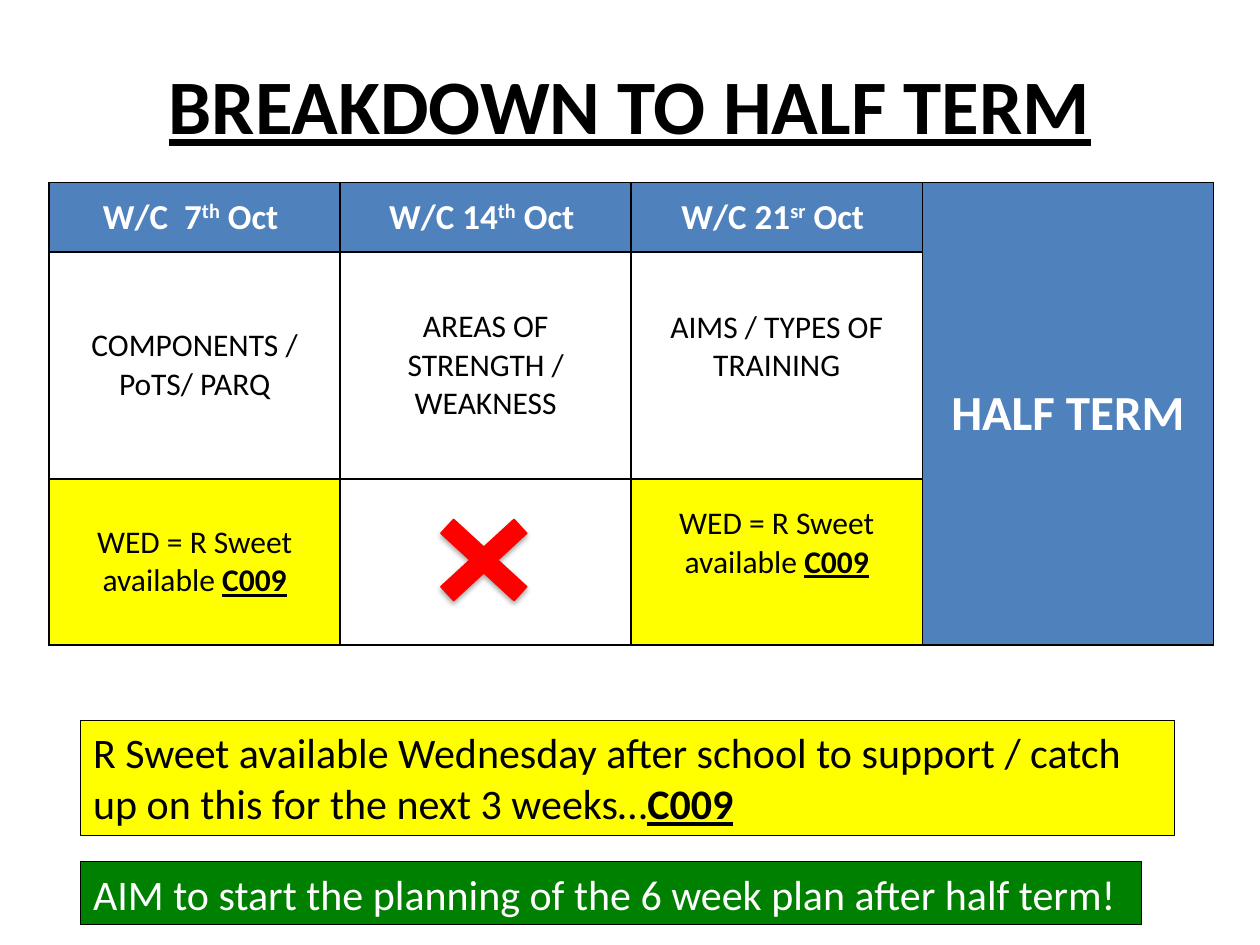
from dataclasses import dataclass, field

from lxml.etree import SubElement
from pptx import Presentation
from pptx.dml.color import RGBColor
from pptx.enum.shapes import MSO_SHAPE as Shape
from pptx.enum.text import MSO_ANCHOR as Anchor, MSO_AUTO_SIZE as AutoSize, PP_ALIGN as Align
from pptx.oxml.ns import qn
from pptx.util import Inches, Pt

BLACK = RGBColor(0x00, 0x00, 0x00)
WHITE = RGBColor(0xFF, 0xFF, 0xFF)
BLUE = RGBColor(0x4F, 0x81, 0xBD)
YELLOW = RGBColor(0xFF, 0xFF, 0x00)
GREEN = RGBColor(0x00, 0x80, 0x00)
RED = RGBColor(0xFF, 0x00, 0x00)

STRONG = {"bold": True, "underline": True}
HEADING = {"size": Pt(20), "bold": True}
BODY = {"size": Pt(18), "bold": False}
NOTE = {"size": Pt(24)}


@dataclass
class Phrase:
    """A stretch of text with its own format."""
    text: str
    fmt: dict = field(default_factory=dict)
    superscript: bool = False


@dataclass
class Entry:
    """A filled table cell."""
    phrases: list[Phrase]
    fill: RGBColor
    color: RGBColor = BLACK
    fmt: dict = field(default_factory=lambda: BODY)
    bottom: float = 0.05


@dataclass
class Note:
    """A framed message below the table."""
    phrases: list[Phrase]
    box: tuple[float, float, float, float]
    fill: RGBColor
    color: RGBColor
    wrap: bool


def write(paragraph, phrases: list[Phrase], fmt: dict, color: RGBColor) -> None:
    for phrase in phrases:
        run = paragraph.add_run()
        run.text = phrase.text
        for name, value in {"name": "Calibri", **fmt, **phrase.fmt}.items():
            setattr(run.font, name, value)
        run.font.color.rgb = color
        if phrase.superscript:
            run._r.get_or_add_rPr().set("baseline", "30000")


def add_borders(cell) -> None:
    properties = cell._tc.get_or_add_tcPr()
    for position, side in enumerate(("lnL", "lnR", "lnT", "lnB")):
        line = properties.makeelement(qn(f"a:{side}"), {"w": str(Pt(1))})
        solid = SubElement(line, qn("a:solidFill"))
        SubElement(solid, qn("a:srgbClr"), val=str(BLACK))
        properties.insert(position, line)


def fill_cell(cell, entry: Entry) -> None:
    cell.fill.solid()
    cell.fill.fore_color.rgb = entry.fill
    cell.vertical_anchor = Anchor.MIDDLE
    cell.margin_bottom = Inches(entry.bottom)
    paragraph = cell.text_frame.paragraphs[0]
    paragraph.alignment = Align.CENTER
    write(paragraph, entry.phrases, entry.fmt, entry.color)


def add_note(slide, note: Note) -> None:
    box = slide.shapes.add_textbox(*map(Inches, note.box))
    box.fill.solid()
    box.fill.fore_color.rgb = note.fill
    box.line.color.rgb = BLACK
    box.line.width = Pt(0.75)
    box.text_frame.word_wrap = note.wrap
    box.text_frame.auto_size = AutoSize.SHAPE_TO_FIT_TEXT
    write(box.text_frame.paragraphs[0], note.phrases, NOTE, note.color)


def add_cross(slide) -> None:
    cross = slide.shapes.add_shape(
        Shape.MATH_MULTIPLY, Inches(3.28), Inches(3.93), Inches(1.12), Inches(1.03))
    cross.adjustments[0] = 0.147
    cross.fill.solid()
    cross.fill.fore_color.rgb = RED
    cross.line.color.rgb = RED
    cross.line.width = Pt(0.75)
    # Soft shadow straight below
    cross.shadow.inherit = False
    effects = cross._element.spPr.find(qn("a:effectLst"))
    shadow = SubElement(effects, qn("a:outerShdw"), blurRad=str(Pt(3.1)),
                        dist=str(Pt(1.8)), dir="5400000", rotWithShape="0")
    tint = SubElement(shadow, qn("a:srgbClr"), val=str(BLACK))
    SubElement(tint, qn("a:alpha"), val="35000")


def week(day: str, suffix: str) -> Entry:
    date = [Phrase(f"W/C {day}"), Phrase(suffix, superscript=True), Phrase(" Oct ")]
    return Entry(date, BLUE, WHITE, HEADING)


def topic(text: str, bottom: float = 0.05) -> Entry:
    return Entry([Phrase(text)], WHITE, bottom=bottom)


def support(bottom: float = 0.05) -> Entry:
    return Entry([Phrase("WED = R Sweet available "), Phrase("C009", STRONG)], YELLOW,
                 bottom=bottom)


RAISED = 0.35  # bottom margin that lifts the last week's text
COLUMN_WIDTH = 2.31
ROW_HEIGHTS = (0.55, 1.8, 1.32)
HALF_TERM = Entry([Phrase("HALF TERM")], BLUE, WHITE, {"size": Pt(28), "bold": True})
SCHEDULE = [
    [week(" 7", "th"), week("14", "th"), week("21", "sr"), HALF_TERM],
    [topic("COMPONENTS / PoTS/ PARQ"), topic("AREAS OF STRENGTH / WEAKNESS"),
     topic("AIMS / TYPES OF TRAINING", RAISED)],
    [support(), Entry([], WHITE), support(RAISED)],
]
NOTES = [
    Note([Phrase("R Sweet available Wednesday after school to support / catch up on this "
                 "for the next 3 weeks…"), Phrase("C009", STRONG)],
         (0.64, 5.72, 8.68, 0.91), YELLOW, BLACK, True),
    Note([Phrase("AIM to start the planning of the 6 week plan after half term!")],
         (0.64, 6.84, 8.42, 0.5), GREEN, WHITE, False),
]


def add_schedule(slide) -> None:
    rows, columns = len(ROW_HEIGHTS), len(SCHEDULE[0])
    table = slide.shapes.add_table(
        rows, columns, Inches(0.39), Inches(1.45),
        Inches(columns * COLUMN_WIDTH), Inches(sum(ROW_HEIGHTS))).table
    for column in table.columns:
        column.width = Inches(COLUMN_WIDTH)
    for row, height in zip(table.rows, ROW_HEIGHTS):
        row.height = Inches(height)
    table.cell(0, columns - 1).merge(table.cell(rows - 1, columns - 1))
    for r, entries in enumerate(SCHEDULE):
        for c, entry in enumerate(entries):
            fill_cell(table.cell(r, c), entry)
    for cell in table.iter_cells():
        add_borders(cell)


def main() -> None:
    deck = Presentation()
    deck.slide_width, deck.slide_height = Inches(10), Inches(7.5)
    slide = deck.slides.add_slide(deck.slide_layouts[5])

    # Title
    title = slide.shapes.title
    title.left, title.top, title.width, title.height = map(Inches, (0.5, 0.2, 9, 1.25))
    title.text_frame.vertical_anchor = Anchor.MIDDLE
    heading = title.text_frame.paragraphs[0]
    heading.alignment = Align.CENTER
    write(heading, [Phrase("BREAKDOWN TO HALF TERM", STRONG)], {"size": Pt(44)}, BLACK)

    # Timetable, messages and the mark for the week without support
    add_schedule(slide)
    for note in NOTES:
        add_note(slide, note)
    add_cross(slide)

    deck.save("out.pptx")


if __name__ == "__main__":
    main()
